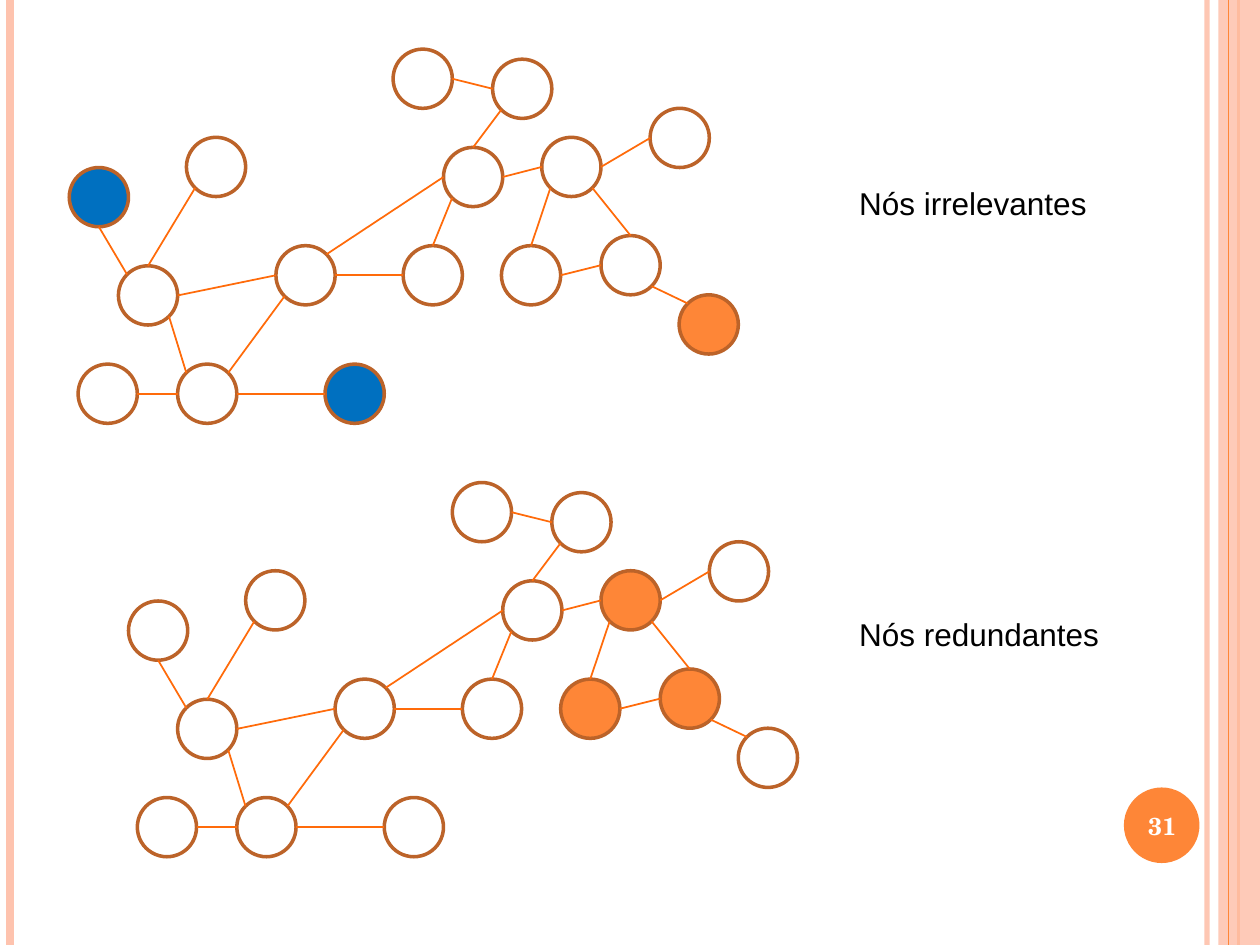
"""Builds a slide of two node graphs: irrelevant and redundant nodes."""
from dataclasses import dataclass
from math import cos, pi, sin

from lxml import etree
from pptx import Presentation
from pptx.dml.color import RGBColor
from pptx.enum.shapes import MSO_CONNECTOR, MSO_SHAPE
from pptx.enum.text import MSO_ANCHOR, PP_ALIGN
from pptx.oxml.ns import qn
from pptx.util import Inches, Pt

STRAIGHT = MSO_CONNECTOR.STRAIGHT
OVAL, RECT = MSO_SHAPE.OVAL, MSO_SHAPE.RECTANGLE
CENTER, LEFT = PP_ALIGN.CENTER, PP_ALIGN.LEFT
MIDDLE, TOP = MSO_ANCHOR.MIDDLE, MSO_ANCHOR.TOP


@dataclass(frozen=True)
class Theme:
    band: str = "FEC3AE"
    accent: str = "FE8637"
    blue: str = "0070C0"
    outline: str = "BC6329"
    edge: str = "FF6B0A"
    white: str = "FFFFFF"
    black: str = "000000"
    body_font: str = "Arial"
    number_font: str = "TeX Gyre Schola"
    body_size: int = 18
    number_size: int = 14


SLIDE_W, SLIDE_H = 10, 7.5
NODE_SIZE = 0.47
ANGLES = {"right": 0, "bottom_right": 1, "bottom": 2, "bottom_left": 3,
          "left": 4, "top_left": 5, "top": 6, "top_right": 7}
NODES = {
    "A": (0.55, 1.33), "B": (0.94, 2.11), "C": (1.48, 1.09), "D": (2.19, 1.95),
    "E": (1.41, 2.89), "F": (0.62, 2.89), "G": (2.58, 2.89), "H": (3.12, 0.39),
    "I": (3.52, 1.17), "J": (3.91, 0.47), "K": (4.3, 1.09), "L": (3.98, 1.95),
    "M": (3.2, 1.95), "N": (4.77, 1.87), "O": (5.39, 2.34), "P": (5.16, 0.86),
}
EDGES = [
    ("D", "right", "M", "left"), ("M", "top", "I", "bottom_left"),
    ("D", "top_right", "I", "left"), ("I", "right", "K", "left"),
    ("I", "top", "J", "bottom_left"), ("H", "right", "J", "left"),
    ("K", "bottom_right", "N", "top"), ("L", "top", "K", "bottom_left"),
    ("L", "right", "N", "left"), ("E", "top_right", "D", "bottom_left"),
    ("E", "right", "G", "left"), ("B", "right", "D", "left"),
    ("B", "top", "C", "bottom_left"), ("B", "top_left", "A", "bottom"),
    ("F", "right", "E", "left"), ("E", "top_left", "B", "bottom_right"),
    ("N", "bottom_right", "O", "top_left"), ("K", "right", "P", "left"),
]


class SlideBuilder:
    """Holds the theme and the current slide."""

    def __init__(self, s, theme):
        self.s, self.theme = s, theme

    def set_alpha(self, element, percent):
        """Sets the opacity of the first solid colour in an element."""
        clr = next(element.iter(qn("a:srgbClr")))
        etree.SubElement(clr, qn("a:alpha")).set("val", str(percent * 1000))

    def line(self, start, end, color, width, opacity=100):
        """Adds a straight line between two points."""
        cxn = self.s.shapes.add_connector(STRAIGHT, *map(Inches, (*start, *end)))
        cxn.line.color.rgb = RGBColor.from_string(color)
        cxn.line.width = Pt(width)
        sp_pr = cxn._element.spPr
        etree.SubElement(sp_pr, qn("a:effectLst"))
        if opacity < 100:
            self.set_alpha(sp_pr, opacity)

    def shape(self, kind, box, fill=None, outline=None, opacity=100):
        """Adds a preset shape with optional fill and outline."""
        sp = self.s.shapes.add_shape(kind, *map(Inches, box))
        sp.shadow.inherit = False
        if fill:
            sp.fill.solid()
            sp.fill.fore_color.rgb = RGBColor.from_string(fill)
        else:
            sp.fill.background()
        if outline:
            sp.line.color.rgb = RGBColor.from_string(outline)
            sp.line.width = Pt(2)
        else:
            sp.line.fill.background()
        if opacity < 100:
            self.set_alpha(sp._element.spPr, opacity)

    def text(self, box, text, color, font, align=LEFT, anchor=TOP, wrap=False):
        """Adds a one-line text box."""
        tf = self.s.shapes.add_textbox(*map(Inches, box)).text_frame
        tf.word_wrap, tf.vertical_anchor = wrap, anchor
        p = tf.paragraphs[0]
        p.alignment = align
        r = p.add_run()
        r.text = text
        r.font.color.rgb = RGBColor.from_string(color)
        for name, value in font.items():
            setattr(r.font, name, value)

    def graph(self, dx, dy, fills):
        """Adds the node graph at an offset, with some nodes filled."""
        for name, (x, y) in NODES.items():
            self.shape(OVAL, (x + dx, y + dy, NODE_SIZE, NODE_SIZE),
                       fills.get(name), self.theme.outline)

        def site(name, side):
            x, y = NODES[name]
            radius, angle = NODE_SIZE / 2, ANGLES[side] * pi / 4
            return (x + dx + radius * (1 + cos(angle)),
                    y + dy + radius * (1 + sin(angle)))

        for first, first_side, second, second_side in EDGES:
            self.line(site(first, first_side), site(second, second_side),
                      self.theme.edge, 1)

    def frame(self, number):
        """Adds the side bands and the slide number badge."""
        t = self.theme
        for x, color, width, opacity in ((9.58, t.band, 3, 93), (0.08, t.band, 4.5, 100),
                                         (9.83, t.accent, 1.5, 100)):
            self.line((x, 0), (x, SLIDE_H), color, width, opacity)
        self.shape(RECT, (9.67, 0, 0.33, SLIDE_H), t.band, opacity=87)
        self.line((9.75, 0), (9.75, SLIDE_H), t.accent, 0.75)
        self.shape(OVAL, (8.92, 6.25, 0.6, 0.6), t.accent)
        font = {"name": t.number_font, "size": Pt(t.number_size), "bold": True}
        self.text((8.89, 6.27, 0.67, 0.57), number, t.white, font, CENTER, MIDDLE, True)


def main():
    prs = Presentation()
    prs.slide_width, prs.slide_height = Inches(SLIDE_W), Inches(SLIDE_H)
    theme = Theme()
    builder = SlideBuilder(prs.slides.add_slide(prs.slide_layouts[6]), theme)
    builder.frame("31")
    builder.graph(0, 0, {"A": theme.blue, "G": theme.blue, "O": theme.accent})
    builder.graph(0.47, 3.44, dict.fromkeys("KLN", theme.accent))
    font = {"name": theme.body_font, "size": Pt(theme.body_size)}
    for y, width, label in ((1.41, 2.03, "Nós irrelevantes"), (4.83, 2.12, "Nós redundantes")):
        builder.text((6.72, y, width, 0.4), label, theme.black, font)
    prs.save("out.pptx")


if __name__ == "__main__":
    main()
